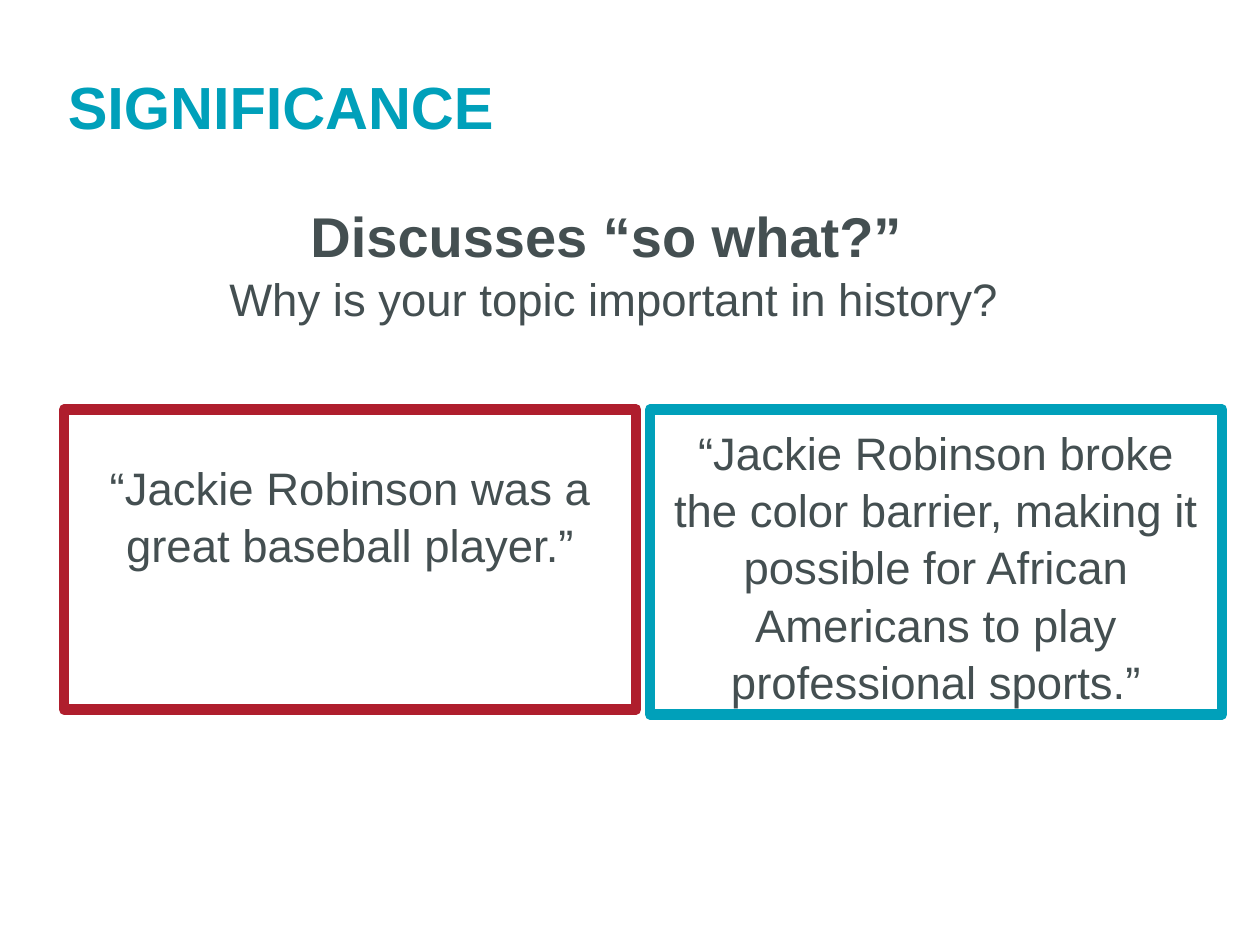
from pptx import Presentation
from pptx.dml.color import RGBColor
from pptx.enum.shapes import MSO_SHAPE
from pptx.enum.text import MSO_ANCHOR, PP_ALIGN
from pptx.util import Inches, Pt

TEAL = RGBColor(0x00, 0xA0, 0xBA)
RED = RGBColor(0xAF, 0x1E, 0x2D)
GRAY = RGBColor(0x44, 0x4F, 0x51)


def fill_text(sp, lines, align, color=GRAY, top=0.1):
    """Write (text, size, bold) lines into a shape."""
    tf = sp.text_frame
    tf.word_wrap = True
    tf.vertical_anchor = MSO_ANCHOR.TOP
    tf.margin_left = tf.margin_right = tf.margin_bottom = Inches(0.1)
    tf.margin_top = Inches(top)
    for i, (text, size, bold) in enumerate(lines):
        p = tf.add_paragraph() if i else tf.paragraphs[0]
        p.text = text
        p.alignment = align
        p.line_spacing = 1.05
        p.font.name = "Arial"
        p.font.size = Pt(size)
        p.font.bold = bold
        p.font.color.rgb = color


prs = Presentation()
prs.slide_width, prs.slide_height = Inches(10), Inches(7.5)
s = prs.slides.add_slide(prs.slide_layouts[6])

# Central question
sp = s.shapes.add_textbox(Inches(0.64), Inches(1.47), Inches(8.47), Inches(1.31))
fill_text(sp, [("Discusses “so what?” ", 32, True),
               ("Why is your topic important in history?", 26, False)], PP_ALIGN.CENTER)

# Title
sp = s.shapes.add_textbox(Inches(0.44), Inches(0.43), Inches(9.18), Inches(0.74))
fill_text(sp, [("SIGNIFICANCE", 34, True)], PP_ALIGN.LEFT, TEAL)

# Weak and strong example: left, height, line colour, top inset, text
examples = [
    (0.51, 2.38, RED, 0.38, "“Jackie Robinson was a great baseball player.”"),
    (5.16, 2.42, TEAL, 0.1, "“Jackie Robinson broke the color barrier, making it possible "
                            "for African Americans to play professional sports.”"),
]
for left, height, color, top, text in examples:
    sp = s.shapes.add_shape(MSO_SHAPE.RECTANGLE, Inches(left), Inches(3.25),
                            Inches(4.54), Inches(height))
    sp.shadow.inherit = False
    sp.fill.background()
    sp.line.color.rgb = color
    sp.line.width = Pt(6)
    fill_text(sp, [(text, 26, False)], PP_ALIGN.CENTER, top=top)

prs.save("out.pptx")
